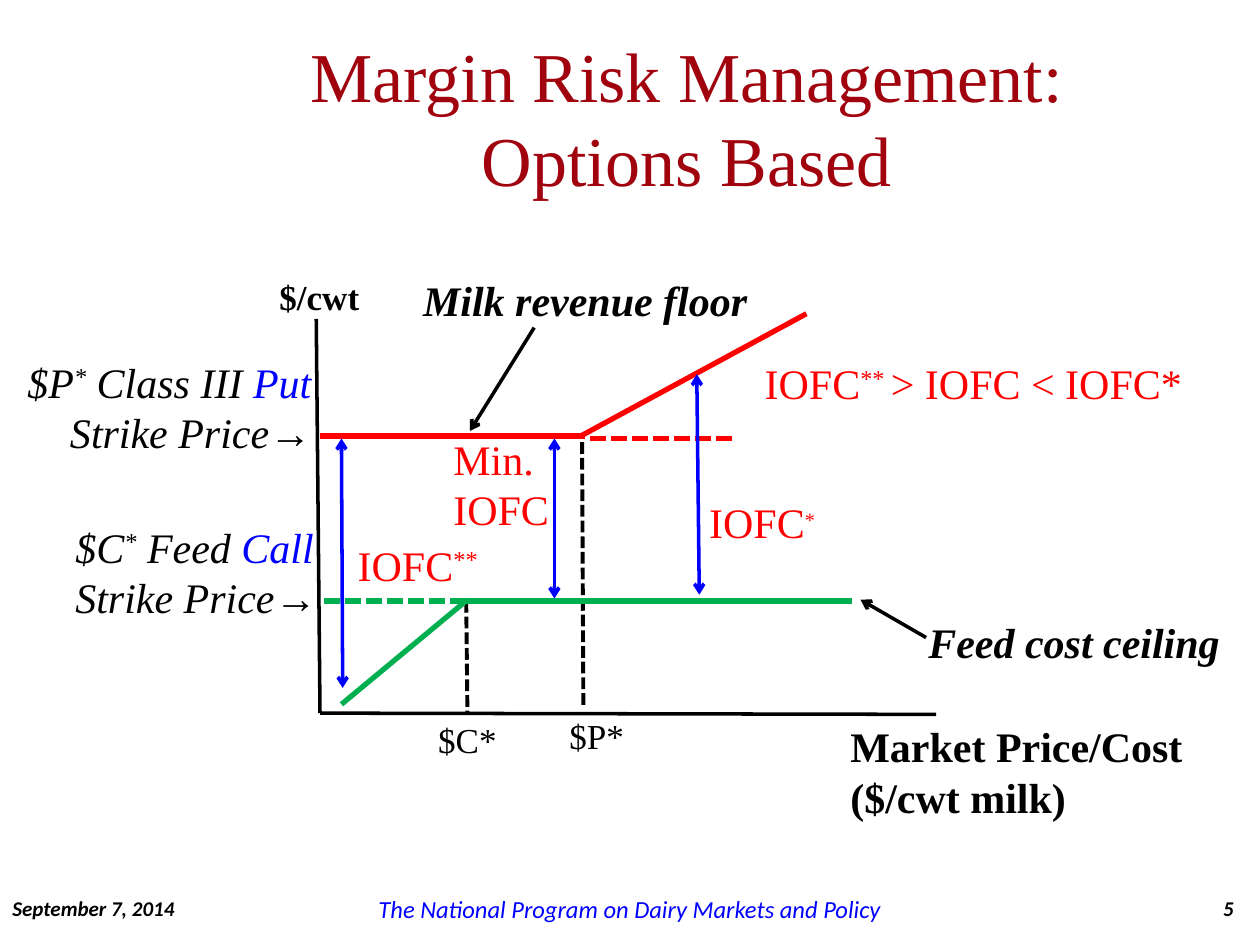
from lxml.etree import SubElement
from pptx import Presentation
from pptx.dml.color import RGBColor
from pptx.enum.dml import MSO_LINE
from pptx.enum.shapes import MSO_CONNECTOR
from pptx.enum.text import MSO_ANCHOR, MSO_AUTO_SIZE, PP_ALIGN
from pptx.oxml.ns import qn
from pptx.util import Inches, Pt

COLORS = {"black": "000000", "title": "A0020E", "red": "FF0000",
          "green": "00B050", "blue": "0000FF"}
SERIF, SANS = "Times New Roman", "Calibri"
LEFT, CENTER, RIGHT = PP_ALIGN.LEFT, PP_ALIGN.CENTER, PP_ALIGN.RIGHT


def add_line(start, end, color="black", width=2, dashed=False, arrows=()):
    """Draw a straight line; arrows names its ends: headEnd (start), tailEnd (end)."""
    line = s.shapes.add_connector(MSO_CONNECTOR.STRAIGHT,
                                  *[Inches(v) for v in (*start, *end)])
    line.line.color.rgb = RGBColor.from_string(COLORS[color])
    line.line.width = Pt(width)
    if dashed:
        line.line.dash_style = MSO_LINE.SQUARE_DOT
    ln = line.line._get_or_add_ln()
    for arrow in arrows:
        SubElement(ln, qn("a:" + arrow), type="arrow")
    SubElement(line._element.spPr, qn("a:effectLst"))


def add_text(box, paragraphs, size=24, color="black", bold=False, italic=False,
             align=LEFT, font=SERIF, wrap=False, anchor=MSO_ANCHOR.TOP):
    """Add a text box; each paragraph is a list of (text, style) runs."""
    tf = s.shapes.add_textbox(*[Inches(v) for v in box]).text_frame
    tf.word_wrap = wrap
    tf.vertical_anchor = anchor
    for i, runs in enumerate(paragraphs):
        p = tf.add_paragraph() if i else tf.paragraphs[0]
        p.alignment = align
        p.font.name, p.font.size = font, Pt(size)
        p.font.bold, p.font.italic = bold, italic
        p.font.color.rgb = RGBColor.from_string(COLORS[color])
        for text, style in runs:
            r = p.add_run()
            r.text = text
            if "color" in style:
                r.font.color.rgb = RGBColor.from_string(COLORS[style["color"]])
            if "size" in style:
                r.font.size = Pt(style["size"])
            if "bold" in style:
                r.font.bold = True
            if "raised" in style:
                r._r.get_or_add_rPr().set("baseline", "30000")


prs = Presentation()
prs.slide_width, prs.slide_height = Inches(10), Inches(7.5)
s = prs.slides.add_slide(prs.slide_layouts[5])

title = s.shapes.title
title.left, title.top = Inches(1.4), Inches(0.3)
title.width, title.height = Inches(8.1), Inches(1.25)
tf = title.text_frame
tf.text = "Margin Risk Management:\vOptions Based"
tf.auto_size = MSO_AUTO_SIZE.NONE
tf.vertical_anchor = MSO_ANCHOR.MIDDLE
p = tf.paragraphs[0]
p.alignment = CENTER
p.font.name, p.font.size = SERIF, Pt(40)
p.font.color.rgb = RGBColor.from_string(COLORS["title"])

# Strike price guides
add_line((3.7, 4.77), (3.71, 5.66), width=2.25, dashed=True)
add_line((4.62, 3.51), (4.63, 5.62), width=2.25, dashed=True)
add_line((3.7, 4.77), (2.54, 4.77), "green", 3, dashed=True)
add_line((5.81, 3.48), (4.65, 3.48), "red", 3, dashed=True)

# Axes
add_line((2.54, 5.66), (7.43, 5.67))
add_line((2.51, 2.53), (2.54, 5.66))

# Feed cost and milk revenue
add_line((3.7, 4.77), (6.76, 4.77), "green", 3)
add_line((3.71, 4.76), (2.71, 5.59), "green", 3)
add_line((2.54, 3.46), (4.64, 3.46), "red", 3)
add_line((4.61, 3.46), (6.4, 2.49), "red", 3)

# Callout and margin arrows
for start, end in [((4.24, 2.6), (3.73, 3.42)), ((7.35, 5.06), (6.83, 4.76))]:
    add_line(start, end, arrows=["tailEnd"])
for start, end in [((5.53, 2.97), (5.55, 4.72)), ((2.71, 3.48), (2.72, 5.46)),
                   ((4.4, 3.48), (4.4, 4.75))]:
    add_line(start, end, "blue", arrows=["headEnd", "tailEnd"])

# Axis labels
add_text((2.12, 2.14, 0.84, 0.44), [[("$/cwt", {})]], 20, bold=True)
add_text((6.65, 5.67, 3.31, 0.91), [[("Market Price/Cost ($/cwt milk)", {})]],
         bold=True, wrap=True)
add_text((4.42, 5.62, 0.64, 0.44), [[("$P*", {})]], 20)
add_text((3.38, 5.65, 0.67, 0.44), [[("$C*", {})]], 20)

# Callouts
add_text((3.26, 2.13, 3.3, 0.5), [[("Milk revenue floor", {})]],
         bold=True, italic=True, wrap=True)
add_text((7.27, 4.84, 2.77, 0.5), [[("Feed cost ceiling", {})]],
         bold=True, italic=True, wrap=True)

# Margin labels
raised = {"raised": True}
for box, paragraphs in [
    ((3.5, 3.39, 0.97, 0.91), [[("Min.", {})], [("IOFC", {})]]),
    ((5.53, 3.89, 1.06, 0.5), [[("IOFC", {}), ("*", {"raised": True, "size": 20})]]),
    ((2.74, 4.23, 1.19, 0.5), [[("IOFC", {}), ("**", raised)]]),
    ((5.97, 2.79, 3.59, 0.5),
     [[("IOFC", {}), ("** ", raised), ("> IOFC < IOFC*", {})]]),
]:
    add_text(box, paragraphs, color="red")

# Strike price labels
for box, price, product, option, align in [
    ((0.08, 2.78, 2.49, 0.91), "$P", " Class III ", "Put", RIGHT),
    ((0.5, 4.09, 2.13, 0.91), "$C", " Feed ", "Call", LEFT),
]:
    add_text(box, [[(price, {}), ("*", raised), (product, {}),
                    (option, {"color": "blue"})],
                   [("Strike Price", {}), ("→", {"bold": True})]],
             italic=True, align=align)

# Footer
for left, width, text, size, color, bold, align in [
    (0, 1.53, "September 7, 2014", 12, "black", True, LEFT),
    (2.88, 4.24, "The National Program on Dairy Markets and Policy", 14, "blue",
     False, CENTER),
    (9.11, 0.78, "5", 12, "black", True, RIGHT),
]:
    add_text((left, 7.09, width, 0.24), [[(text, {})]], size, color, bold, True,
             align, SANS, wrap=True, anchor=MSO_ANCHOR.MIDDLE)

prs.save("out.pptx")
